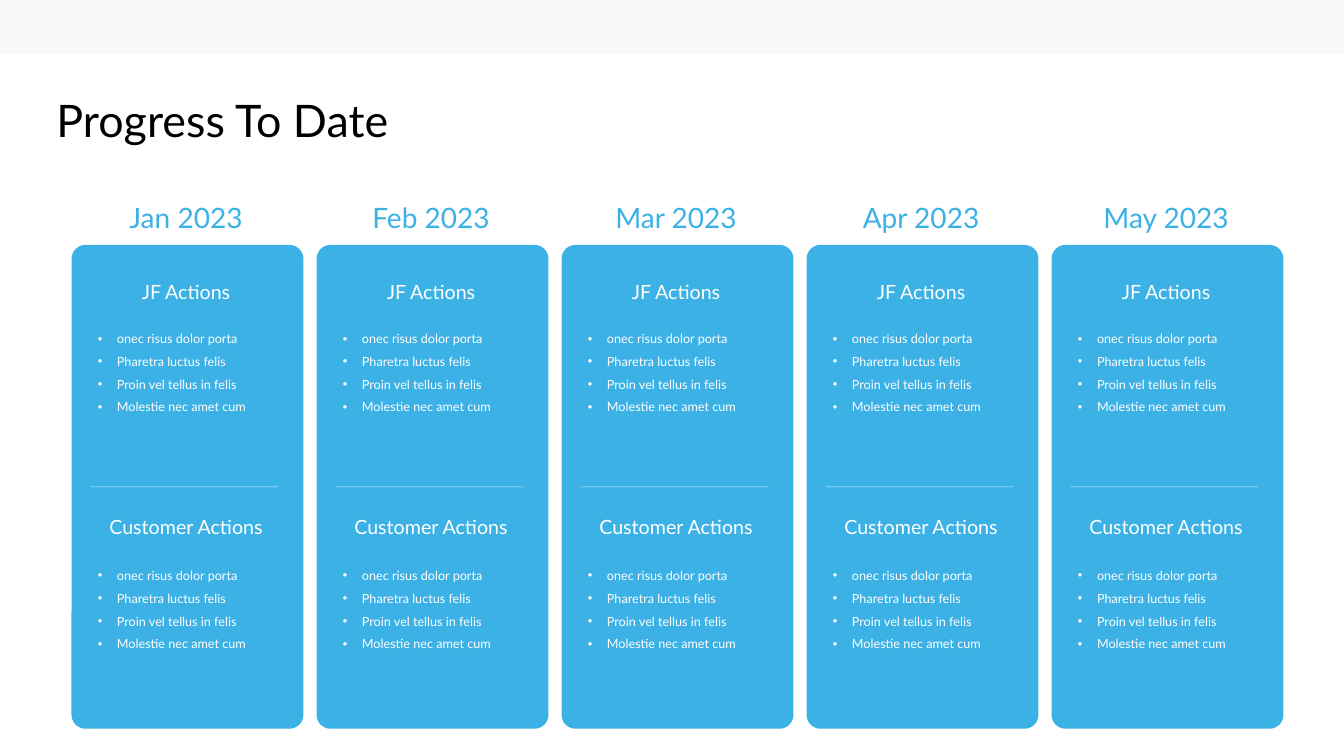
from pptx import Presentation
from pptx.dml.color import RGBColor as RGB
from pptx.enum.shapes import MSO_CONNECTOR as LINK, MSO_SHAPE as SHAPE
from pptx.enum.text import MSO_ANCHOR as ANCHOR, PP_ALIGN as ALIGN
from pptx.oxml.ns import qn
from pptx.util import Pt
from lxml.etree import SubElement as Sub

PX = 9144  # 100 px to the inch
FONT = "Lato"
HUES = {"band": "F7F8F9", "card": "3CB1E5", "white": "FFFFFF", "black": "000000"}
MONTHS = ["Jan 2023", "Feb 2023", "Mar 2023", "Apr 2023", "May 2023"]
TASKS = ["onec risus dolor porta", "Pharetra luctus felis",
         "Proin vel tellus in felis", "Molestie nec amet cum"]
LEFT, PITCH = 71, 243


def px(*nums):
    return [n * PX for n in nums]


def hue(name):
    return RGB.from_string(HUES[name])


def style(frame, size, color, align=ALIGN.LEFT):
    """Clear the margins and format every paragraph of a text frame."""
    frame.margin_left = frame.margin_right = 0
    frame.margin_top = frame.margin_bottom = 0
    frame.vertical_anchor = ANCHOR.TOP
    for para in frame.paragraphs:
        para.alignment = align
        for run in para.runs:
            run.font.name = FONT
            run.font.size = Pt(size)
            run.font.color.rgb = hue(color)


def add_block(slide, kind, box, color):
    block = slide.shapes.add_shape(kind, *px(*box))
    block.shadow.inherit = False
    block.fill.solid()
    block.fill.fore_color.rgb = hue(color)
    block.line.fill.background()
    return block


def add_label(slide, text, box, size, color):
    frame = slide.shapes.add_textbox(*px(*box)).text_frame
    frame.word_wrap = True
    frame.text = text
    style(frame, size, color, ALIGN.CENTER)


def add_list(slide, items, box):
    frame = slide.shapes.add_textbox(*px(*box)).text_frame
    frame.word_wrap = False
    frame.text = "\n".join(items)
    for para in frame.paragraphs:
        para.line_spacing = 1.5
        props = para._p.get_or_add_pPr()
        props.set("marL", str(19 * PX))
        props.set("indent", str(-19 * PX))
        tint = Sub(props, qn("a:buClr"))
        Sub(tint, qn("a:srgbClr"), val=HUES["white"])
        Sub(props, qn("a:buFont"), typeface="Arial")
        Sub(props, qn("a:buChar"), char="•")
    style(frame, 9, "white")


def add_rule(slide, x, y, width):
    rule = slide.shapes.add_connector(LINK.STRAIGHT, *px(x, y, x + width, y))
    rule.line.width = Pt(0.25)
    rule.line.color.rgb = hue("white")
    tint = rule.line._ln.find(".//" + qn("a:srgbClr"))
    Sub(tint, qn("a:alpha"), val="82000")
    Sub(rule._element.spPr, qn("a:effectLst"))


def add_month(slide, month, x):
    card = add_block(slide, SHAPE.ROUNDED_RECTANGLE, (x, 243, 230, 480), "card")
    card.adjustments[0] = 0.06
    add_label(slide, month, (x + 19, 199, 189, 42), 20, "card")
    add_label(slide, "JF Actions", (x + 19, 278, 189, 32), 14, "white")
    add_list(slide, TASKS, (x + 26, 321, 169, 81))
    add_rule(slide, x + 19, 483, 186)
    add_label(slide, "Customer Actions", (x + 8, 511, 211, 32), 14, "white")
    add_list(slide, TASKS, (x + 26, 556, 169, 81))


def set_title(slide, text, box):
    title = slide.shapes.title
    title.left, title.top, title.width, title.height = px(*box)
    title.text_frame.text = text
    title.text_frame.paragraphs[0].line_spacing = 0.9
    style(title.text_frame, 32, "black")


def main():
    deck = Presentation()
    deck.slide_width, deck.slide_height = px(1333, 750)
    slide = deck.slides.add_slide(deck.slide_layouts[5])
    add_block(slide, SHAPE.RECTANGLE, (0, 0, 1333, 53), "band")
    for col, month in enumerate(MONTHS):
        add_month(slide, month, LEFT + col * PITCH)
    set_title(slide, "Progress To Date", (56, 98, 1217, 84))
    deck.save("out.pptx")


if __name__ == "__main__":
    main()
